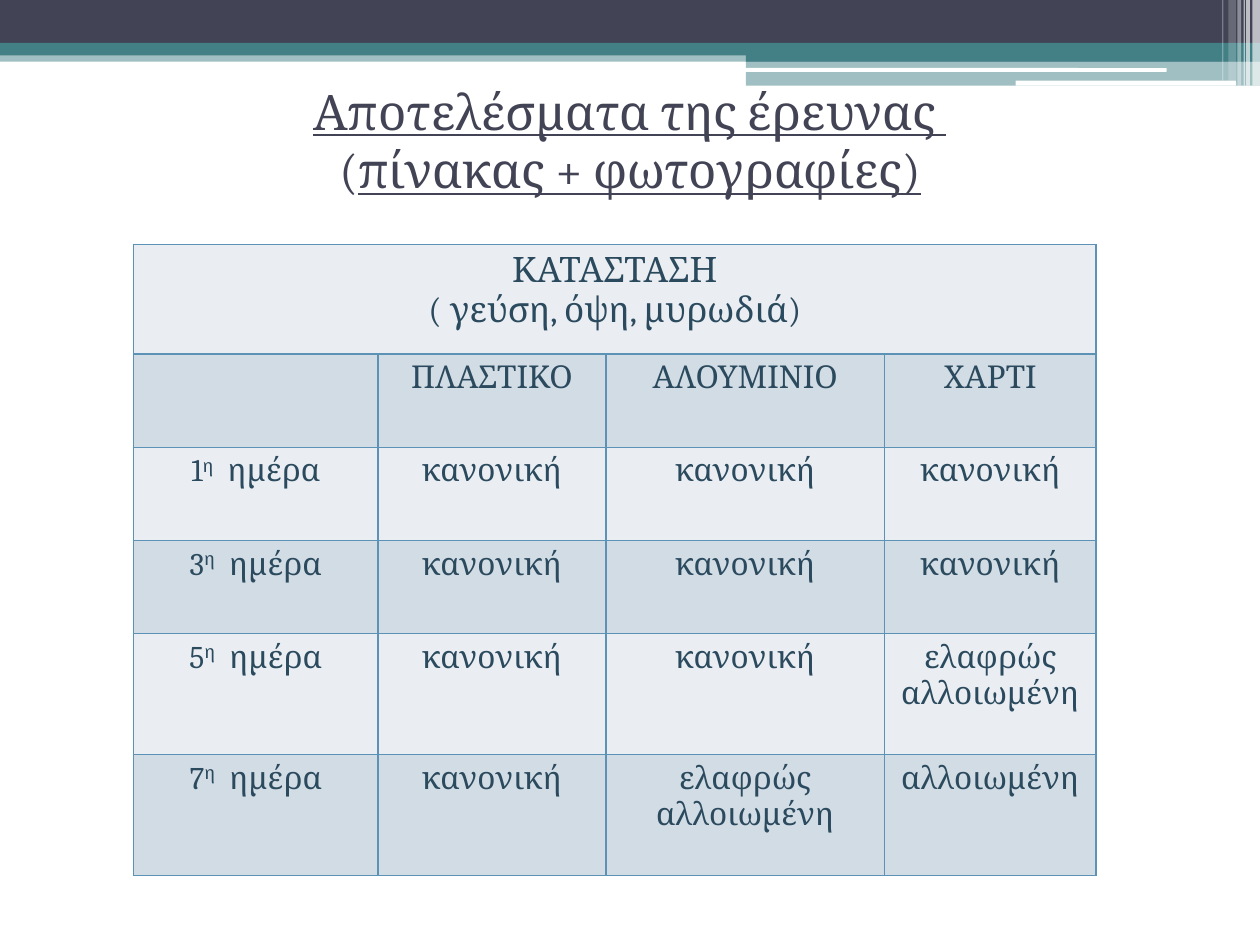
from lxml.etree import SubElement
from pptx import Presentation
from pptx.dml.color import RGBColor
from pptx.enum.shapes import MSO_SHAPE
from pptx.enum.text import MSO_ANCHOR, PP_ALIGN
from pptx.oxml.ns import qn
from pptx.util import Inches, Pt

NAVY, TEAL, WHITE = "424456", "438086", "FFFFFF"
LIGHT, DARK, INK, BORDER = "EAEEF3", "D2DCE5", "2B4A5E", "5C92B5"


def paint(fill, color, opacity=100):
    fill.solid()
    fill.fore_color.rgb = RGBColor.from_string(color)
    if opacity < 100:
        color_node = fill._xPr.find(qn("a:solidFill"))[0]
        SubElement(color_node, qn("a:alpha"), val=str(opacity * 1000))


def add_text(para, text, size=18, color=INK, underline=False, raised=False):
    para.alignment = PP_ALIGN.CENTER
    span = para.add_run()
    span.text = text
    span.font.name = "Cambria"
    span.font.size = Pt(size)
    span.font.underline = underline
    paint(span.font.fill, color)
    if raised:
        span._r.get_or_add_rPr().set("baseline", "30000")


deck = Presentation()
deck.slide_width = Inches(10)
deck.slide_height = Inches(7.5)
page = deck.slides.add_slide(deck.slide_layouts[5])

bands = [
    (0, 0.4, 10, 0.09, TEAL, 50),
    (0, 0, 10, 0.34, NAVY, 100),
    (0, 0.34, 10, 0.1, TEAL, 100),
    (5.92, 0.39, 4.08, 0.1, TEAL, 100),
    (5.92, 0.48, 4.08, 0.2, TEAL, 50),
    (5.91, 0.54, 3.35, 0.03, WHITE, 100),
    (8.06, 0.64, 1.75, 0.04, WHITE, 100),
    (9.94, 0, 0.06, 0.68, WHITE, 65),
    (9.89, 0, 0.03, 0.68, WHITE, 65),
    (9.87, 0, 0.01, 0.68, WHITE, 60),
    (9.82, 0, 0.03, 0.68, WHITE, 40),
    (9.75, 0, 0.06, 0.64, WHITE, 20),
    (9.7, 0, 0.01, 0.64, WHITE, 30),
]
for left, top, width, height, color, opacity in bands:
    rounded = color == WHITE and opacity == 100
    kind = MSO_SHAPE.ROUNDED_RECTANGLE if rounded else MSO_SHAPE.RECTANGLE
    band = page.shapes.add_shape(
        kind, Inches(left), Inches(top), Inches(width), Inches(height))
    band.shadow.inherit = False
    band.line.fill.background()
    paint(band.fill, color, opacity)

title = page.shapes.title
title.left, title.top = Inches(0.5), Inches(0.6)
title.width, title.height = Inches(9), Inches(1.02)
title.text_frame.vertical_anchor = MSO_ANCHOR.MIDDLE
title.text_frame.word_wrap = True
heading = title.text_frame.paragraphs[0]
add_text(heading, "Αποτελέσματα της έρευνας ", size=28, color=NAVY, underline=True)
heading.add_line_break()
add_text(heading, "(", size=28, color=NAVY)
add_text(heading, "πίνακας + φωτογραφίες)", size=28, color=NAVY, underline=True)

normal, spoiled = "κανονική", "αλλοιωμένη"
slightly_spoiled = "ελαφρώς\nαλλοιωμένη"
rows = [
    ["ΚΑΤΑΣΤΑΣΗ\n( γεύση, όψη, μυρωδιά)", "", "", ""],
    ["", "ΠΛΑΣΤΙΚΟ", "ΑΛΟΥΜΙΝΙΟ", "ΧΑΡΤΙ"],
    ["1", normal, normal, normal],
    ["3", normal, normal, normal],
    ["5", normal, normal, slightly_spoiled],
    ["7", normal, slightly_spoiled, spoiled],
]
column_widths = [1.94, 1.81, 2.21, 1.68]
row_heights = [0.87, 0.74, 0.74, 0.74, 0.96, 0.96]

table = page.shapes.add_table(
    len(rows), len(column_widths), Inches(1.06), Inches(1.94),
    Inches(sum(column_widths)), Inches(sum(row_heights))).table
table.first_row = False
table.horz_banding = False
for column, width in zip(table.columns, column_widths):
    column.width = Inches(width)
for row, height in zip(table.rows, row_heights):
    row.height = Inches(height)
table.cell(0, 0).merge(table.cell(0, 3))

for row_index, row in enumerate(rows):
    for column_index, text in enumerate(row):
        cell = table.cell(row_index, column_index)
        properties = cell._tc.get_or_add_tcPr()
        for side in ("lnL", "lnR", "lnT", "lnB"):
            border = SubElement(properties, qn(f"a:{side}"), w=str(Pt(1)))
            border_fill = SubElement(border, qn("a:solidFill"))
            SubElement(border_fill, qn("a:srgbClr"), val=BORDER)
        paint(cell.fill, DARK if row_index % 2 else LIGHT)
        if not text:
            continue
        frame = cell.text_frame
        for line_index, line in enumerate(text.split("\n")):
            para = frame.add_paragraph() if line_index else frame.paragraphs[0]
            add_text(para, line, size=18 if row_index else 20)
        if text.isdigit():
            add_text(para, "η", raised=True)
            add_text(para, "  ημέρα")

deck.save("out.pptx")
